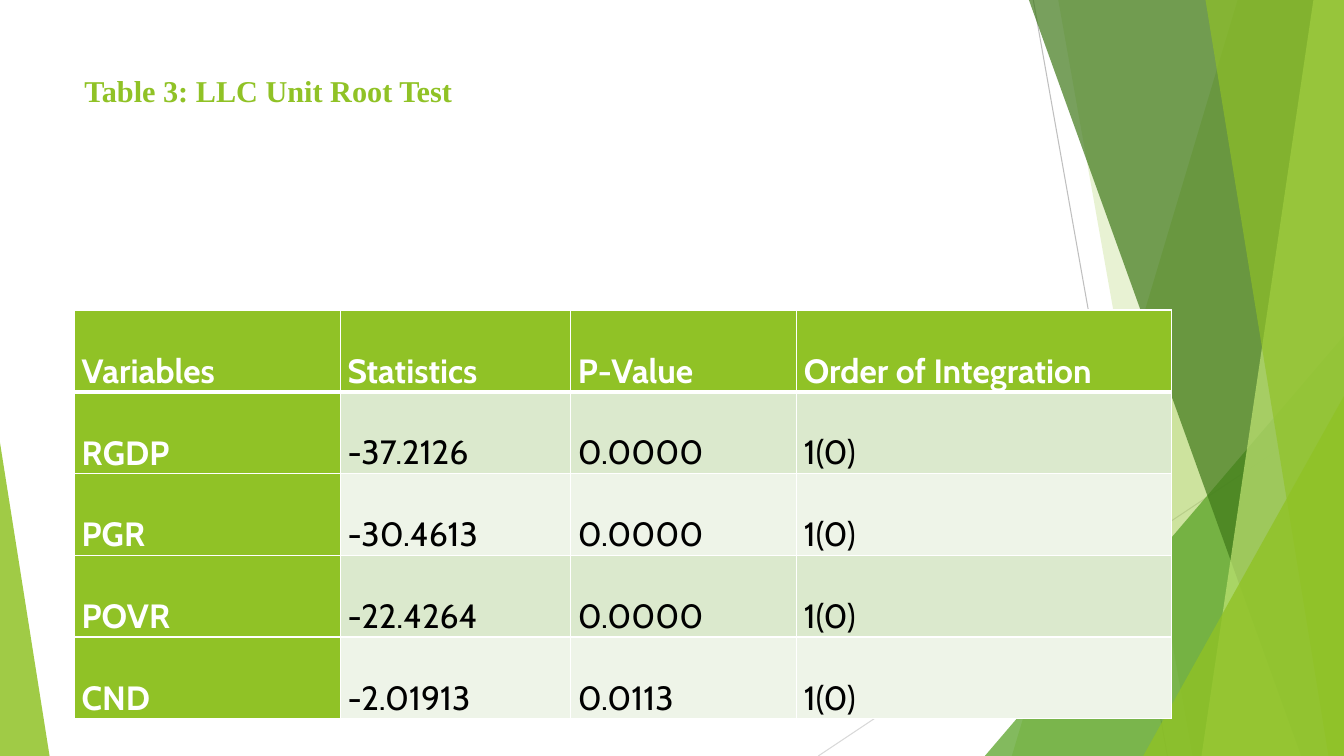
import pptx
import pptx.dml.color
import pptx.enum.shapes
import pptx.enum.text
import pptx.oxml
import pptx.oxml.ns
import pptx.util
from pptx.util import Cm

# Content
TITLE = "Table 3: LLC Unit Root Test"
ROWS = [
    ("Variables", "Statistics", "P-Value", "Order of Integration"),
    ("RGDP", "-37.2126", "0.0000", "1(0)"),
    ("PGR", "-30.4613", "0.0000", "1(0)"),
    ("POVR", "-22.4264", "0.0000", "1(0)"),
    ("CND", "-2.01913", "0.0113", "1(0)"),
]

# Layout in centimetres
WIDTH, HEIGHT = 33.87, 19.05
TABLE_LEFT, TABLE_TOP = 1.88, 7.81
COLUMN_WIDTHS = [6.7, 5.8, 5.7, 9.44]
ROW_HEIGHT = 2.06

GREEN, WHITE, BLACK = "90C226", "FFFFFF", "000000"
BANDS = ["DBE9CD", "EEF4E8"]

# Decoration, back to front
LINES = [
    ((26.04, 0), (29.42, HEIGHT), "BFBFBF"),
    ((WIDTH, 10.23), (20.62, HEIGHT), "D9D9D9"),
]
# Bands reach the right edge: top-left x, bottom-left x, colour, opacity
# Triangles: left, top, width, apex position, colour, opacity
DECORATION = [
    ("band", 31.19, 25.5, GREEN, 30),
    ("band", 26.67, 30.05, GREEN, 20),
    ("triangle", 24.82, 8.46, 9.05, 1, "54A021", 72),
    ("band", 25.93, 32.79, "3F7819", 70),
    ("band", 33.1, 30.28, "C0E474", 70),
    ("band", 30.38, 33.48, GREEN, 65),
    ("triangle", 28.81, 9.98, 5.06, 1, GREEN, 80),
    ("triangle", 0, 11.15, 1.25, 0, GREEN, 85),
]


def set_color(target, color):
    target.rgb = pptx.dml.color.RGBColor.from_string(color)


def paint(shape, color, opacity):
    shape.shadow.inherit = False
    shape.line.fill.background()
    shape.fill.solid()
    set_color(shape.fill.fore_color, color)
    color_element = shape.fill._xPr.find(".//" + pptx.oxml.ns.qn("a:srgbClr"))
    alpha = pptx.oxml.parse_xml(
        f'<a:alpha {pptx.oxml.ns.nsdecls("a")} val="{opacity * 1000}"/>')
    color_element.append(alpha)


def add_line(slide, start, end, color):
    line = slide.shapes.add_connector(
        pptx.enum.shapes.MSO_CONNECTOR.STRAIGHT, *map(Cm, start + end))
    line.line.width = pptx.util.Pt(0.75)
    set_color(line.line.color, color)
    line._element.spPr.append(pptx.oxml.parse_xml(
        f'<a:effectLst {pptx.oxml.ns.nsdecls("a")}/>'))


def add_band(slide, top_x, bottom_x, color, opacity):
    builder = slide.shapes.build_freeform(Cm(top_x), 0, scale=1.0)
    corners = [(WIDTH, 0), (WIDTH, HEIGHT), (bottom_x, HEIGHT)]
    builder.add_line_segments([(Cm(x), Cm(y)) for x, y in corners], close=True)
    paint(builder.convert_to_shape(), color, opacity)


def add_triangle(slide, left, top, width, apex, color, opacity):
    shape = slide.shapes.add_shape(
        pptx.enum.shapes.MSO_SHAPE.ISOSCELES_TRIANGLE,
        Cm(left), Cm(top), Cm(width), Cm(HEIGHT - top))
    shape.adjustments[0] = apex
    paint(shape, color, opacity)


def add_run(paragraph, text, font, size, color, bold):
    run = paragraph.add_run()
    run.text = text
    run.font.name = font
    run.font.size = pptx.util.Pt(size)
    run.font.bold = bold
    set_color(run.font.color, color)


def add_borders(cell, widths):
    properties = cell._tc.get_or_add_tcPr()
    for side, width in widths.items():
        properties.append(pptx.oxml.parse_xml(
            f'<a:ln{side} {pptx.oxml.ns.nsdecls("a")} w="{pptx.util.Pt(width)}">'
            f'<a:solidFill><a:srgbClr val="{WHITE}"/></a:solidFill></a:ln{side}>'))


def fill_cell(cell, text, row, column):
    heading = row == 0 or column == 0
    add_borders(cell, {"L": 1, "R": 1, "T": 3 if row == 1 else 1,
                       "B": 3 if row == 0 else 1})
    cell.fill.solid()
    set_color(cell.fill.fore_color, GREEN if heading else BANDS[(row - 1) % 2])
    cell.margin_left = cell.margin_right = Cm(0.18)
    cell.margin_top = cell.margin_bottom = 0
    if row and column == 0:
        cell.vertical_anchor = pptx.enum.text.MSO_ANCHOR.BOTTOM
    paragraph = cell.text_frame.paragraphs[0]
    paragraph.alignment = pptx.enum.text.PP_ALIGN.JUSTIFY
    paragraph.line_spacing = 2.0
    paragraph.space_after = pptx.util.Pt(8)
    add_run(paragraph, text, "Cabin", 24, WHITE if heading else BLACK, heading)


def main():
    presentation = pptx.Presentation()
    presentation.slide_width, presentation.slide_height = Cm(WIDTH), Cm(HEIGHT)
    slide = presentation.slides.add_slide(presentation.slide_layouts[6])

    # Background
    for line in LINES:
        add_line(slide, *line)
    drawers = {"band": add_band, "triangle": add_triangle}
    for kind, *values in DECORATION:
        drawers[kind](slide, *values)

    # Title
    title = slide.shapes.add_textbox(Cm(1.88), Cm(1.7), Cm(23.88), Cm(2.18))
    title.text_frame.word_wrap = True
    add_run(title.text_frame.paragraphs[0], TITLE, "Times New Roman", 21.6,
            GREEN, True)

    # Table
    table = slide.shapes.add_table(
        len(ROWS), len(COLUMN_WIDTHS), Cm(TABLE_LEFT), Cm(TABLE_TOP),
        Cm(sum(COLUMN_WIDTHS)), Cm(ROW_HEIGHT * len(ROWS))).table
    for column, width in zip(table.columns, COLUMN_WIDTHS):
        column.width = Cm(width)
    for row, texts in enumerate(ROWS):
        table.rows[row].height = Cm(ROW_HEIGHT)
        for column, text in enumerate(texts):
            fill_cell(table.cell(row, column), text, row, column)

    presentation.save("out.pptx")


if __name__ == "__main__":
    main()
